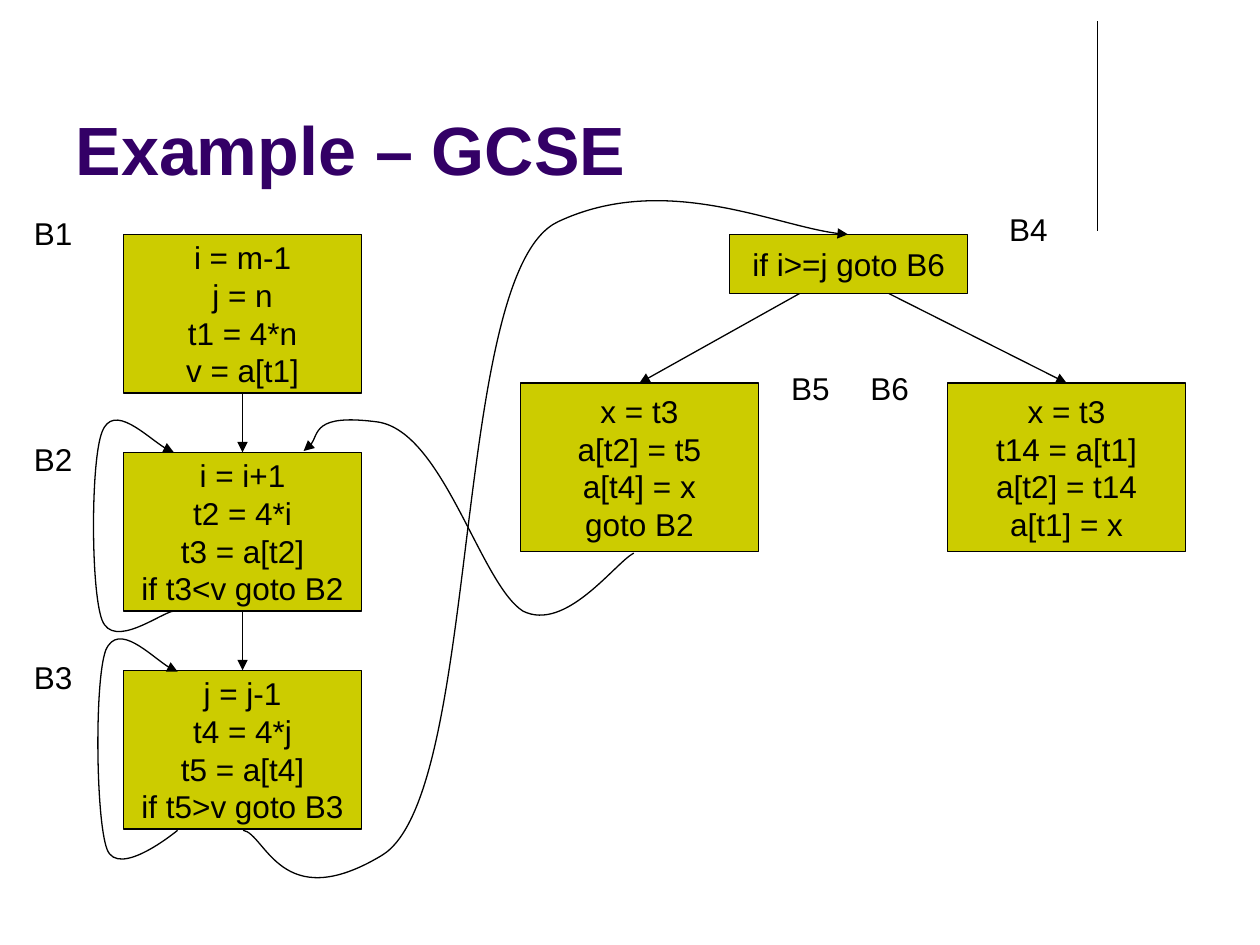
from itertools import chain

from lxml import etree
from pptx import Presentation
from pptx.dml.color import RGBColor
from pptx.enum import shapes, text
from pptx.oxml.ns import qn
from pptx.util import Inches, Pt

BLACK = RGBColor(0x00, 0x00, 0x00)
OLIVE = RGBColor(0xCC, 0xCC, 0x00)
PURPLE = RGBColor(0x33, 0x00, 0x66)

# Content: code, (left, top, height) of the block, (left, top) of its label
BLOCK_WIDTH = 1.89
HANGING = 0.38
BLOCKS = {
    "B1": (["i = m-1", "j = n", "t1 = 4*n", "v = a[t1]"],
           (0.98, 1.86, 1.26), (0.17, 1.65)),
    "B2": (["i = i+1", "t2 = 4*i", "t3 = a[t2]", "if t3<v goto B2"],
           (0.98, 3.59, 1.26), (0.17, 3.44)),
    "B3": (["j = j-1", "t4 = 4*j", "t5 = a[t4]", "if t5>v goto B3"],
           (0.98, 5.32, 1.26), (0.17, 5.17)),
    "B4": (["if i>=j goto B6"], (5.79, 1.86, 0.47), (7.91, 1.62)),
    "B5": (["x = t3", "a[t2] = t5", "a[t4] = x", "goto B2"],
           (4.13, 3.04, 1.34), (6.18, 2.88)),
    "B6": (["x = t3", "t14 = a[t1]", "a[t2] = t14", "a[t1] = x"],
           (7.52, 3.04, 1.34), (6.81, 2.88)),
}

# Straight edges: source, target, shift of the start from the source's centre
EDGES = [("B4", "B5", -0.39), ("B4", "B6", 0.32), ("B1", "B2", 0), ("B2", "B3", 0)]

# Curved edges: start point, then three Bezier points per segment
JUMPS = [
    # B5 to B2
    [(5.03, 4.39), (4.88, 4.47), (4.49, 5.02), (4.15, 4.85), (3.81, 4.63),
     (3.52, 3.43), (3, 3.35), (2.48, 3.28), (2.53, 3.53), (2.41, 3.58)],
    # B2 to itself
    [(1.38, 4.85), (1.28, 4.86), (0.9, 5.16), (0.81, 4.92), (0.72, 4.68),
     (0.72, 3.66), (0.81, 3.43), (0.9, 3.19), (1.26, 3.56), (1.38, 3.59)],
    # B3 to itself
    [(1.41, 6.59), (1.41, 6.59), (0.94, 6.98), (0.85, 6.74), (0.76, 6.5),
     (0.75, 5.4), (0.84, 5.16), (0.94, 4.93), (1.29, 5.3), (1.41, 5.33)],
    # B3 to B4
    [(1.93, 6.59), (2.11, 6.62), (2.23, 7.27), (3.03, 6.79), (3.83, 6.31),
     (3.57, 2.16), (4.43, 1.76), (5.28, 1.36), (6.25, 1.84), (6.73, 1.86)],
]

BODY = {"name": "Arial", "size": Pt(18), "bold": False}
HEADING = {"name": "Arial", "size": Pt(39), "bold": True}


def set_font(paragraph, values, color):
    for key, value in values.items():
        setattr(paragraph.font, key, value)
    paragraph.font.color.rgb = color


def set_line(item, arrow=False):
    item.line.color.rgb = BLACK
    item.line.width = Pt(0.75)
    if arrow:
        etree.SubElement(item.line._get_or_add_ln(), qn("a:tailEnd"), type="triangle")


def add_line(slide, start, end, arrow=True):
    line = slide.shapes.add_connector(
        shapes.MSO_CONNECTOR.STRAIGHT, *map(Inches, chain(start, end)))
    set_line(line, arrow)
    etree.SubElement(line._element.spPr, qn("a:effectLst"))


def add_block(slide, code, left, top, height):
    block = slide.shapes.add_shape(
        shapes.MSO_SHAPE.RECTANGLE, *map(Inches, (left, top, BLOCK_WIDTH, height)))
    block.shadow.inherit = False
    block.fill.solid()
    block.fill.fore_color.rgb = OLIVE
    set_line(block)
    frame = block.text_frame
    frame.word_wrap = False
    frame.vertical_anchor = text.MSO_ANCHOR.MIDDLE
    frame.text = "\n".join(code)
    for statement in frame.paragraphs:
        statement.alignment = text.PP_ALIGN.CENTER
        properties = statement._p.get_or_add_pPr()
        properties.set("marL", str(Inches(HANGING)))
        properties.set("indent", str(-Inches(HANGING)))
        set_font(statement, BODY, BLACK)


def add_label(slide, name, left, top):
    label = slide.shapes.add_textbox(*map(Inches, (left, top, 0.51, 0.4)))
    frame = label.text_frame
    frame.word_wrap = False
    frame.auto_size = text.MSO_AUTO_SIZE.SHAPE_TO_FIT_TEXT
    frame.text = name
    set_font(frame.paragraphs[0], BODY, BLACK)


def add_jump(slide, points):
    start, *rest = [(Inches(x), Inches(y)) for x, y in points]
    builder = slide.shapes.build_freeform(*start)
    builder.add_line_segments(rest, close=False)
    jump = builder.convert_to_shape()
    # Gather each three points into one Bezier segment
    outline = next(jump._element.iter(qn("a:path")))
    steps = outline.findall(qn("a:lnTo"))
    for first in range(0, len(steps), 3):
        curve = etree.SubElement(outline, qn("a:cubicBezTo"))
        for step in steps[first:first + 3]:
            curve.append(step[0])
            outline.remove(step)
    jump.shadow.inherit = False
    jump.fill.background()
    set_line(jump, arrow=True)


def main():
    deck = Presentation()
    deck.slide_width, deck.slide_height = Inches(10), Inches(7.5)
    slide = deck.slides.add_slide(deck.slide_layouts[5])

    # Title and the rule beside it
    add_line(slide, (8.71, 0.17), (8.71, 1.83), arrow=False)
    title = slide.shapes.title
    title.left, title.top, title.width, title.height = map(
        Inches, (0.5, 0.13, 8.25, 1.42))
    title.text_frame.text = "Example – GCSE"
    title.text_frame.vertical_anchor = text.MSO_ANCHOR.BOTTOM
    title.text_frame.auto_size = text.MSO_AUTO_SIZE.NONE
    heading = title.text_frame.paragraphs[0]
    heading.alignment = text.PP_ALIGN.LEFT
    set_font(heading, HEADING, PURPLE)

    # Basic blocks with their labels
    for name, (code, place, label_place) in BLOCKS.items():
        add_block(slide, code, *place)
        add_label(slide, name, *label_place)

    # Edges run from the bottom of one block to the top centre of another
    for source, target, shift in EDGES:
        left, top, height = BLOCKS[source][1]
        target_left, target_top, _ = BLOCKS[target][1]
        add_line(slide, (left + BLOCK_WIDTH / 2 + shift, top + height),
                 (target_left + BLOCK_WIDTH / 2, target_top))
    for points in JUMPS:
        add_jump(slide, points)

    deck.save("out.pptx")


if __name__ == "__main__":
    main()
